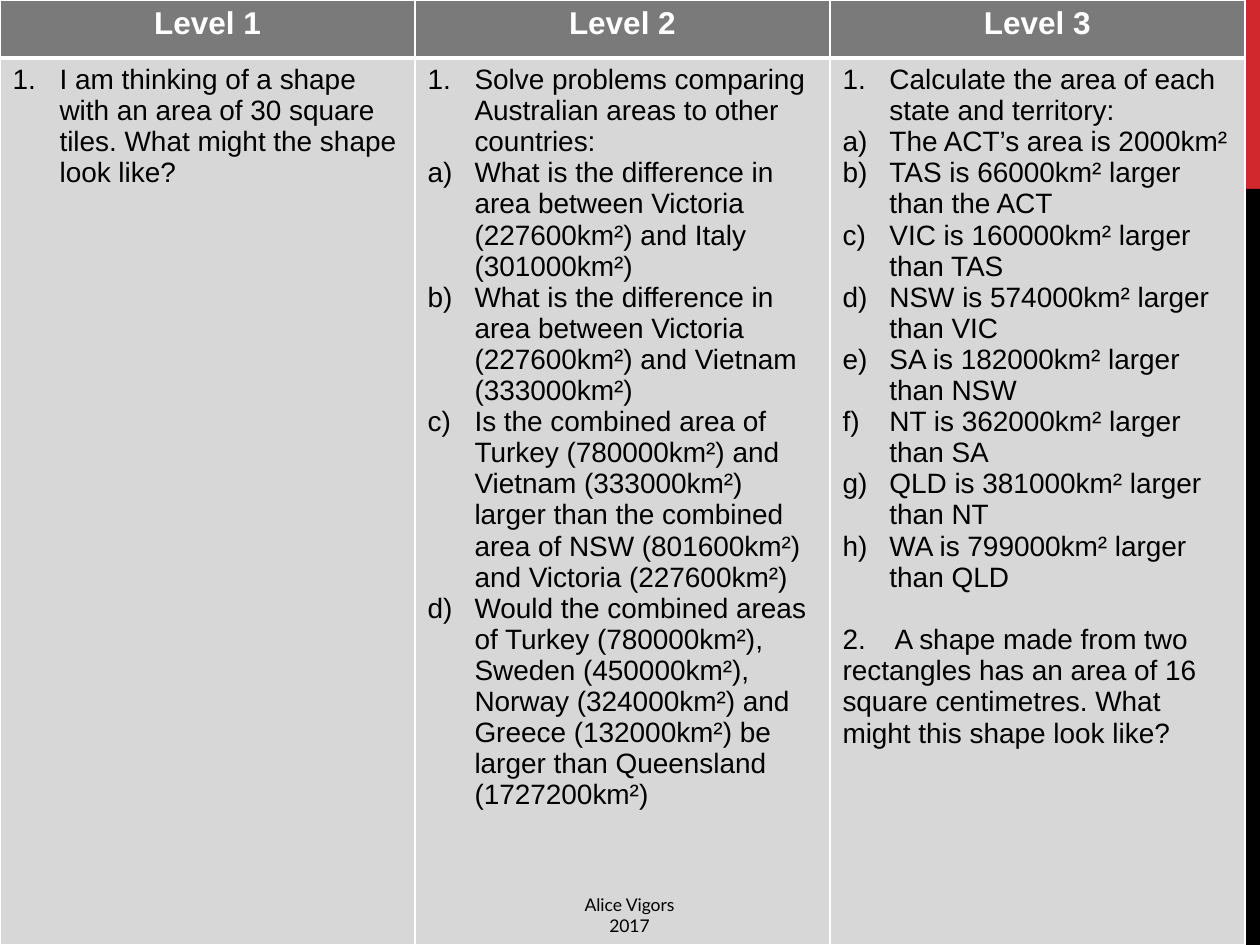
from lxml.etree import SubElement
from pptx import Presentation
from pptx.dml.color import RGBColor
from pptx.enum.shapes import MSO_SHAPE
from pptx.enum.text import MSO_AUTO_SIZE, PP_ALIGN
from pptx.oxml.ns import qn
from pptx.util import Pt

SCALE = 914400 / 126
INDENT = 47
LEVELS = [
    ("Level 1", [
        ("arabicPeriod", "I am thinking of a shape with an area of 30 square tiles. "
                         "What might the shape look like?"),
    ]),
    ("Level 2", [
        ("arabicPeriod", "Solve problems comparing Australian areas to other countries:"),
        ("alphaLcParenR", "What is the difference in area between Victoria (227600km²) and Italy (301000km²)"),
        ("alphaLcParenR", "What is the difference in area between Victoria (227600km²) and Vietnam (333000km²)"),
        ("alphaLcParenR", "Is the combined area of Turkey (780000km²) and Vietnam (333000km²) larger than "
                          "the combined area of NSW (801600km²) and Victoria (227600km²)"),
        ("alphaLcParenR", "Would the combined areas of Turkey (780000km²), Sweden (450000km²), Norway "
                          "(324000km²) and Greece (132000km²) be larger than Queensland (1727200km²)"),
    ]),
    ("Level 3", [
        ("arabicPeriod", "Calculate the area of each state and territory:"),
        ("alphaLcParenR", "The ACT’s area is 2000km²"),
        ("alphaLcParenR", "TAS is 66000km² larger than the ACT"),
        ("alphaLcParenR", "VIC is 160000km² larger than TAS"),
        ("alphaLcParenR", "NSW is 574000km² larger than VIC"),
        ("alphaLcParenR", "SA is 182000km² larger than NSW"),
        ("alphaLcParenR", "NT is 362000km² larger than SA"),
        ("alphaLcParenR", "QLD is 381000km² larger than NT"),
        ("alphaLcParenR", "WA is 799000km² larger than QLD"),
        (None, "2.\tA shape made from two rectangles has an area of 16 square centimetres. "
               "What might this shape look like?"),
    ]),
]


def px(n):
    """Turn px into EMU."""
    return round(n * SCALE)


def color(value):
    """Turn a hex string into a colour."""
    return RGBColor.from_string(value)


def style(p, size, fill, font="Arial", bold=False, align=PP_ALIGN.LEFT):
    """Format every run of a paragraph."""
    p.alignment = align
    for r in p.runs:
        r.font.name, r.font.size, r.font.bold = font, Pt(size), bold
        r.font.color.rgb = color(fill)


def number(p, scheme):
    """Give a paragraph a hanging automatic number."""
    pPr = p._p.get_or_add_pPr()
    pPr.set("marL", str(px(INDENT)))
    pPr.set("indent", str(-px(INDENT)))
    SubElement(pPr, qn("a:buFont"), typeface="+mj-lt")
    SubElement(pPr, qn("a:buAutoNum"), type=scheme)


def separate(p):
    """Set a paragraph one line apart, with a tab stop after its number."""
    p.space_before = Pt(18)
    tabs = SubElement(p._p.get_or_add_pPr(), qn("a:tabLst"))
    SubElement(tabs, qn("a:tab"), pos=str(px(52)), algn="l")


def dress(cell, fill, top, bottom):
    """Give a cell white borders and a fill."""
    tcPr = cell._tc.get_or_add_tcPr()
    for side, width in zip("LRTB", (1, 1, top, bottom)):
        ln = SubElement(tcPr, qn(f"a:ln{side}"), w=str(Pt(width)))
        SubElement(SubElement(ln, qn("a:solidFill")), qn("a:srgbClr"), val="FFFFFF")
    cell.fill.solid()
    cell.fill.fore_color.rgb = color(fill)


def add_side_bar(s, x, y, w, h):
    """Draw the red and black bar, split at a fifth of its height."""
    red = h // 5
    for top, height, fill in ((y, red, "D1282E"), (y + red, h - red, "000000")):
        sp = s.shapes.add_shape(MSO_SHAPE.RECTANGLE, px(x), px(top), px(w), px(height))
        sp.shadow.inherit = False
        sp.fill.solid()
        sp.fill.fore_color.rgb = color(fill)
        sp.line.fill.background()


def add_levels(s, x, y, w, h, head=58):
    """Build the table with one column of questions per level."""
    table = s.shapes.add_table(2, len(LEVELS), px(x), px(y), px(w), px(h)).table
    table.rows[0].height, table.rows[1].height = px(head), px(h - head)
    for i, (title, questions) in enumerate(LEVELS):
        table.columns[i].width = px(w // len(LEVELS))
        header, body = table.cell(0, i), table.cell(1, i)
        dress(header, "7A7A7A", 1, 3)
        dress(body, "D7D7D7", 3, 1)
        header.text_frame.text = title
        style(header.text_frame.paragraphs[0], 18, "FFFFFF", bold=True, align=PP_ALIGN.CENTER)
        tf = body.text_frame
        tf.text = "\n".join(text for _, text in questions)
        for p, (scheme, _) in zip(tf.paragraphs, questions):
            style(p, 16, "000000")
            if scheme:
                number(p, scheme)
            else:
                separate(p)


def add_credit(s, x, y, w, h):
    """Place the author's name and year."""
    tf = s.shapes.add_textbox(px(x), px(y), px(w), px(h)).text_frame
    tf.word_wrap = True
    tf.auto_size = MSO_AUTO_SIZE.SHAPE_TO_FIT_TEXT
    tf.text = "Alice Vigors 2017"
    style(tf.paragraphs[0], 10, "000000", font="Lato", align=PP_ALIGN.CENTER)


def main():
    """Build and save the slide."""
    prs = Presentation()
    prs.slide_width, prs.slide_height = px(1260), px(945)
    s = prs.slides.add_slide(prs.slide_layouts[6])
    add_side_bar(s, 1240, 0, 20, 945)
    add_levels(s, 0, 0, 1245, 945)
    add_credit(s, 562, 888, 135, 55)
    prs.save("out.pptx")


if __name__ == "__main__":
    main()
